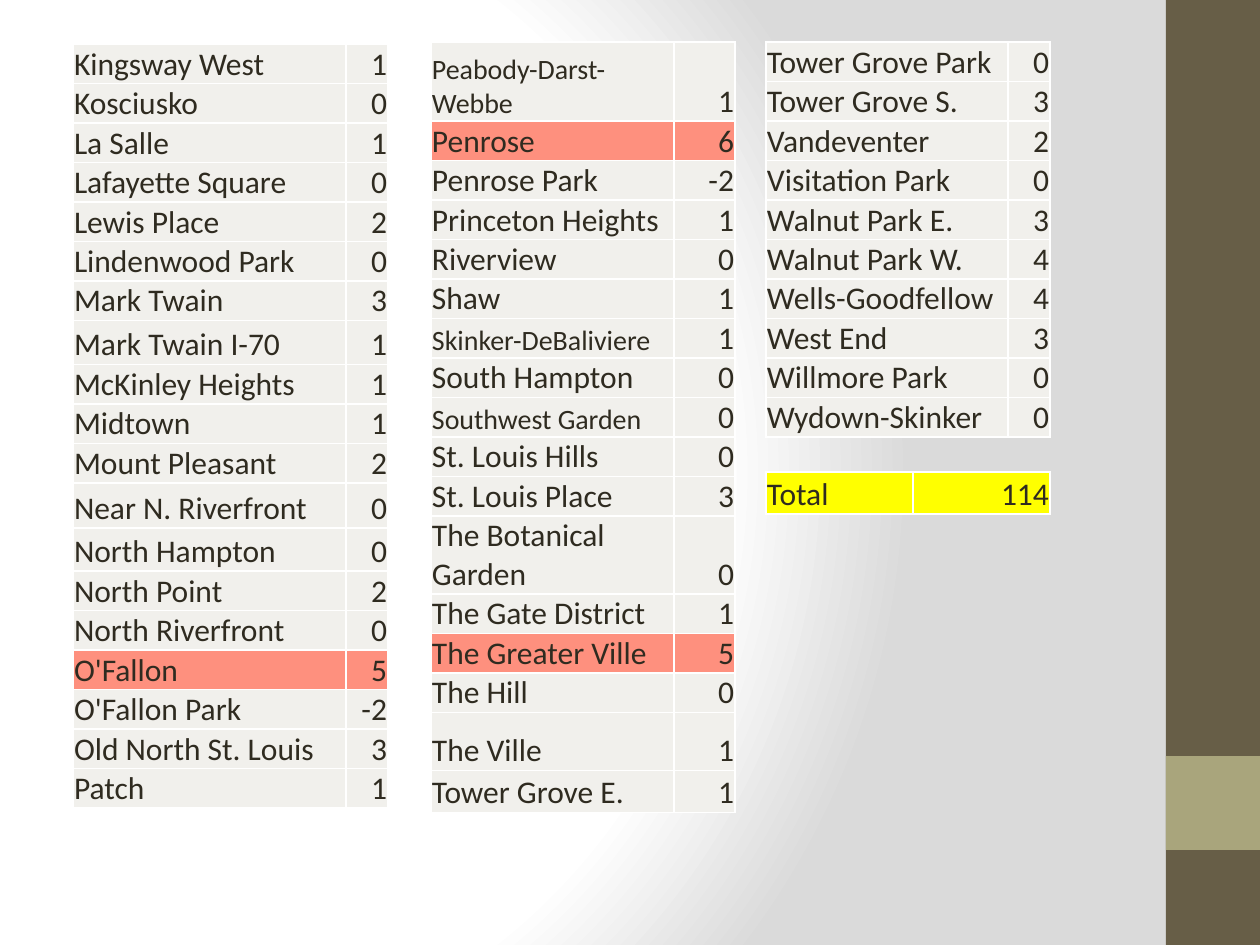
import lxml.etree
import pptx
import pptx.dml.color
import pptx.enum.shapes
import pptx.enum.text
import pptx.oxml
import pptx.oxml.ns
import pptx.util

PX = 914400 // 126
RGB = pptx.dml.color.RGBColor
WHITE = RGB(0xFF, 0xFF, 0xFF)
GRAY = RGB(0xDA, 0xDA, 0xDA)
BROWN = RGB(0x67, 0x5E, 0x47)
OLIVE = RGB(0xA9, 0xA5, 0x7C)
INK = RGB(0x2F, 0x2B, 0x20)
PALE = RGB(0xF1, 0xF0, 0xEC)
SALMON = RGB(0xFE, 0x90, 0x7E)
YELLOW = RGB(0xFF, 0xFF, 0x00)

ROW_HEIGHT = 39
HIGH_SCORE = 5
HEIGHTS = {
    "Mark Twain I-70": 44, "Near N. Riverfront": 45, "North Hampton": 43, "North Point": 40,
    "Peabody-Darst-Webbe": 79, "The Botanical Garden": 78, "The Ville": 58,
    "Tower Grove E.": 42, "Total": 42,
}
SMALL_NAMES = {"Peabody-Darst-Webbe", "Skinker-DeBaliviere", "Southwest Garden"}

KINGSWAY_TO_PATCH = [
    ("Kingsway West", 1), ("Kosciusko", 0), ("La Salle", 1), ("Lafayette Square", 0),
    ("Lewis Place", 2), ("Lindenwood Park", 0), ("Mark Twain", 3), ("Mark Twain I-70", 1),
    ("McKinley Heights", 1), ("Midtown", 1), ("Mount Pleasant", 2), ("Near N. Riverfront", 0),
    ("North Hampton", 0), ("North Point", 2), ("North Riverfront", 0), ("O'Fallon", 5),
    ("O'Fallon Park", -2), ("Old North St. Louis", 3), ("Patch", 1),
]
PEABODY_TO_TOWER = [
    ("Peabody-Darst-Webbe", 1), ("Penrose", 6), ("Penrose Park", -2), ("Princeton Heights", 1),
    ("Riverview", 0), ("Shaw", 1), ("Skinker-DeBaliviere", 1), ("South Hampton", 0),
    ("Southwest Garden", 0), ("St. Louis Hills", 0), ("St. Louis Place", 3),
    ("The Botanical Garden", 0), ("The Gate District", 1), ("The Greater Ville", 5),
    ("The Hill", 0), ("The Ville", 1), ("Tower Grove E.", 1),
]
TOWER_TO_WYDOWN = [
    ("Tower Grove Park", 0), ("Tower Grove S.", 3), ("Vandeventer", 2), ("Visitation Park", 0),
    ("Walnut Park E.", 3), ("Walnut Park W.", 4), ("Wells-Goodfellow", 4), ("West End", 3),
    ("Willmore Park", 0), ("Wydown-Skinker", 0),
]


def px(length):
    """Turn whole pixels into EMU."""
    return pptx.util.Emu(length * PX)


def set_background(slide):
    """Give the slide a circular gradient from white to gray."""
    slide.background.fill.solid()
    solid = slide.element.find(".//" + pptx.oxml.ns.qn("p:bgPr"))[0]
    stops = "".join(
        f'<a:gs pos="{position * 1000}"><a:srgbClr val="{color}"/></a:gs>'
        for position, color in ((0, WHITE), (75, WHITE), (100, GRAY))
    )
    gradient = pptx.oxml.parse_xml(
        f'<a:gradFill {pptx.oxml.ns.nsdecls("a")} rotWithShape="1"><a:gsLst>{stops}</a:gsLst>'
        '<a:path path="circle"><a:fillToRect l="20000" t="50000" r="100000" b="50000"/>'
        '</a:path></a:gradFill>'
    )
    solid.getparent().replace(solid, gradient)


def add_band(slide, left, top, width, height, color):
    """Add a plain rectangle of one colour."""
    band = slide.shapes.add_shape(
        pptx.enum.shapes.MSO_SHAPE.RECTANGLE, px(left), px(top), px(width), px(height)
    )
    band.shadow.inherit = False
    band.fill.solid()
    band.fill.fore_color.rgb = color
    band.line.fill.background()


def write_text(frame, text, size=18, color=INK, font="Calibri", align=None):
    """Write one formatted run into a text frame."""
    paragraph = frame.paragraphs[0]
    paragraph.alignment = align
    run = paragraph.add_run()
    run.text = text
    run.font.size = pptx.util.Pt(size)
    run.font.name = font
    run.font.color.rgb = color


def format_cell(cell, fill):
    """Set the fill, insets, anchor and white borders of a cell."""
    cell.fill.solid()
    cell.fill.fore_color.rgb = fill
    cell.margin_left = cell.margin_right = cell.margin_top = px(1)
    cell.margin_bottom = 0
    cell.vertical_anchor = pptx.enum.text.MSO_ANCHOR.BOTTOM
    properties = cell.fill._xPr
    for position, side in enumerate(("lnL", "lnR", "lnT", "lnB")):
        properties.insert(position, pptx.oxml.parse_xml(
            f'<a:{side} {pptx.oxml.ns.nsdecls("a")} w="12700"><a:solidFill>'
            f'<a:srgbClr val="{WHITE}"/></a:solidFill></a:{side}>'
        ))


def add_scores(slide, left, top, widths, scores, fill=None):
    """Add a table of names and scores, with high scores marked."""
    heights = [HEIGHTS.get(name, ROW_HEIGHT) for name, _ in scores]
    table = slide.shapes.add_table(
        len(scores), 2, px(left), px(top), px(sum(widths)), px(sum(heights))
    ).table
    table.first_row = table.horz_banding = False
    for column, width in zip(table.columns, widths):
        column.width = px(width)
    for row, height, (name, score) in zip(table.rows, heights, scores):
        row.height = px(height)
        name_cell, score_cell = row.cells
        for cell in (name_cell, score_cell):
            format_cell(cell, fill or (SALMON if score >= HIGH_SCORE else PALE))
        write_text(name_cell.text_frame, name, size=16 if name in SMALL_NAMES else 18)
        write_text(score_cell.text_frame, str(score), align=pptx.enum.text.PP_ALIGN.RIGHT)


def main():
    """Build the slide of neighborhood scores."""
    deck = pptx.Presentation()
    deck.slide_width, deck.slide_height = px(1260), px(945)
    slide = deck.slides.add_slide(deck.slide_layouts[6])
    set_background(slide)
    add_band(slide, 1166, 0, 94, 945, BROWN)
    add_band(slide, 1166, 756, 94, 94, OLIVE)
    add_scores(slide, 73, 44, (273, 42), KINGSWAY_TO_PATCH)
    add_scores(slide, 431, 42, (243, 61), PEABODY_TO_TOWER)
    add_scores(slide, 766, 42, (242, 42), TOWER_TO_WYDOWN)
    add_scores(slide, 766, 472, (147, 137), [("Total", 114)], fill=YELLOW)
    deck.save("out.pptx")


if __name__ == "__main__":
    main()
